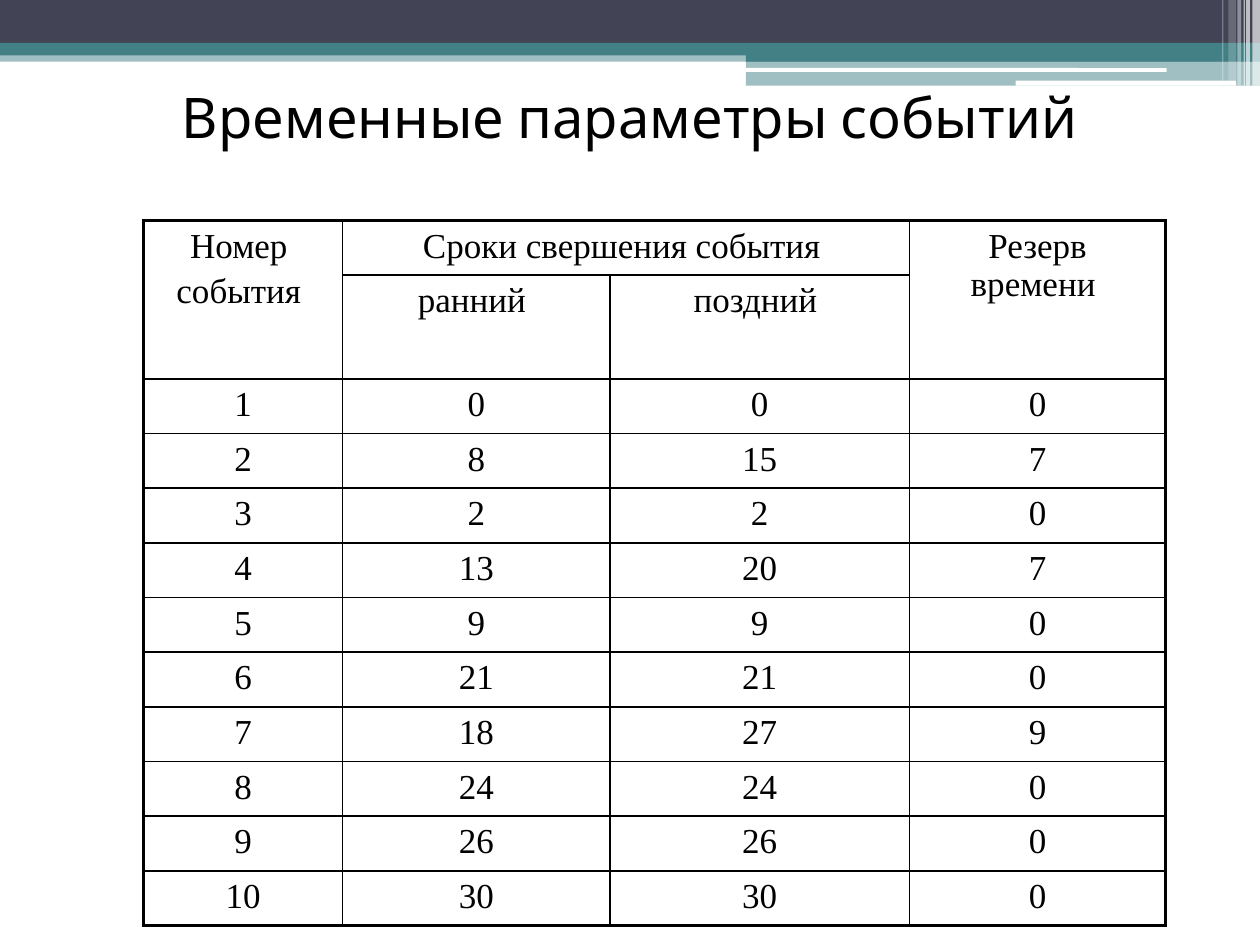
from lxml import etree
from pptx import Presentation
from pptx.dml.color import RGBColor
from pptx.enum.shapes import MSO_SHAPE
from pptx.enum.text import MSO_ANCHOR, PP_ALIGN
from pptx.oxml.ns import qn
from pptx.util import Inches, Pt

RECT = MSO_SHAPE.RECTANGLE
ROUND = MSO_SHAPE.ROUNDED_RECTANGLE
CENTER = PP_ALIGN.CENTER
MIDDLE = MSO_ANCHOR.MIDDLE

NAVY = RGBColor(0x42, 0x44, 0x56)
TEAL = RGBColor(0x43, 0x80, 0x86)
WHITE = RGBColor(0xFF, 0xFF, 0xFF)
BLACK = RGBColor(0, 0, 0)

UNIT = Inches(0.01)
SLIDE_COLS, SLIDE_ROWS = 1000, 750
THIN, THICK = Pt(1), Pt(2.25)

BANDS = [
    (0, 40, 1000, 9, RECT, TEAL, 50),
    (0, 0, 1000, 34, RECT, NAVY, 100),
    (0, 34, 1000, 10, RECT, TEAL, 100),
    (592, 39, 408, 10, RECT, TEAL, 100),
    (592, 48, 408, 20, RECT, TEAL, 50),
    (591, 54, 335, 3, ROUND, WHITE, 100),
    (806, 64, 175, 4, ROUND, WHITE, 100),
]
STRIPES = [
    (994, 6, 68, 65),
    (989, 3, 68, 65),
    (987, 1, 68, 60),
    (982, 3, 68, 40),
    (975, 6, 64, 20),
    (970, 1, 64, 30),
]

COL_WIDTHS = [158, 212, 238, 203]
ROW_HEIGHT = 43.33
HEADERS = [
    ["Номер \nсобытия ", "Сроки свершения события ", "", "Резерв времени "],
    ["", "ранний ", "поздний ", ""],
]
MERGES = [((0, 0), (1, 0)), ((0, 1), (0, 2)), ((0, 3), (1, 3))]
EARLY = [0, 8, 2, 13, 9, 21, 18, 24, 26, 30]
LATE = [0, 15, 2, 20, 9, 21, 27, 24, 26, 30]


def grid(*lengths):
    return [round(length * UNIT) for length in lengths]


def style_paragraph(p, font, size):
    p.alignment = CENTER
    p.font.name = font
    p.font.size = Pt(size)
    p.font.color.rgb = BLACK


def add_band(slide, box, kind, color, opacity):
    sp = slide.shapes.add_shape(kind, *grid(*box))
    sp.shadow.inherit = False
    sp.line.fill.background()
    sp.fill.solid()
    sp.fill.fore_color.rgb = color
    if opacity < 100:
        clr = sp.fill._xPr.find(qn("a:solidFill"))[0]
        etree.SubElement(clr, qn("a:alpha")).set("val", str(opacity * 1000))


def add_header(slide, box):
    left, top, _, _ = box
    for x, y, w, h, kind, color, opacity in BANDS:
        add_band(slide, (left + x, top + y, w, h), kind, color, opacity)
    for x, w, h, opacity in STRIPES:
        add_band(slide, (left + x, top, w, h), RECT, WHITE, opacity)


def add_title(slide, box, text):
    tf = slide.shapes.add_textbox(*grid(*box)).text_frame
    tf.word_wrap = True
    tf.vertical_anchor = MIDDLE
    p = tf.paragraphs[0]
    p.text = text
    style_paragraph(p, "Cabin", 32)


def set_borders(cell, widths):
    tcPr = cell._tc.get_or_add_tcPr()
    for i, (side, width) in enumerate(widths.items()):
        ln = etree.Element(qn(f"a:ln{side}"), w=str(width))
        fill = etree.SubElement(ln, qn("a:solidFill"))
        etree.SubElement(fill, qn("a:srgbClr")).set("val", str(BLACK))
        tcPr.insert(i, ln)


def add_events_table(slide, box):
    events = zip(EARLY, LATE)
    rows = HEADERS + [
        [str(n), str(early), str(late), str(late - early)]
        for n, (early, late) in enumerate(events, 1)
    ]
    last_row, last_col = len(rows) - 1, len(COL_WIDTHS) - 1
    frame = slide.shapes.add_table(len(rows), len(COL_WIDTHS), *grid(*box))
    table = frame.table
    table.first_row = table.horz_banding = False
    for column, width in zip(table.columns, COL_WIDTHS):
        column.width = round(width * UNIT)
    for r, values in enumerate(rows):
        table.rows[r].height = round(ROW_HEIGHT * UNIT)
        for c, value in enumerate(values):
            cell = table.cell(r, c)
            cell.fill.background()
            cell.text = value
            for p in cell.text_frame.paragraphs:
                style_paragraph(p, "Times New Roman", 20)
                p.space_before = Pt(4)
            set_borders(cell, {
                "L": THICK if c == 0 else THIN,
                "R": THICK if c == last_col else THIN,
                "T": THICK if r == 0 else THIN,
                "B": THICK if r == last_row else THIN,
            })
    for first, last in MERGES:
        table.cell(*first).merge(table.cell(*last))


def main():
    prs = Presentation()
    prs.slide_width, prs.slide_height = grid(SLIDE_COLS, SLIDE_ROWS)
    slide = prs.slides.add_slide(prs.slide_layouts[6])
    add_header(slide, (0, 0, SLIDE_COLS, 68))
    add_title(slide, (50, 30, 900, 125), "Временные параметры событий")
    add_events_table(slide, (114, 175, sum(COL_WIDTHS), 520))
    prs.save("out.pptx")


if __name__ == "__main__":
    main()
